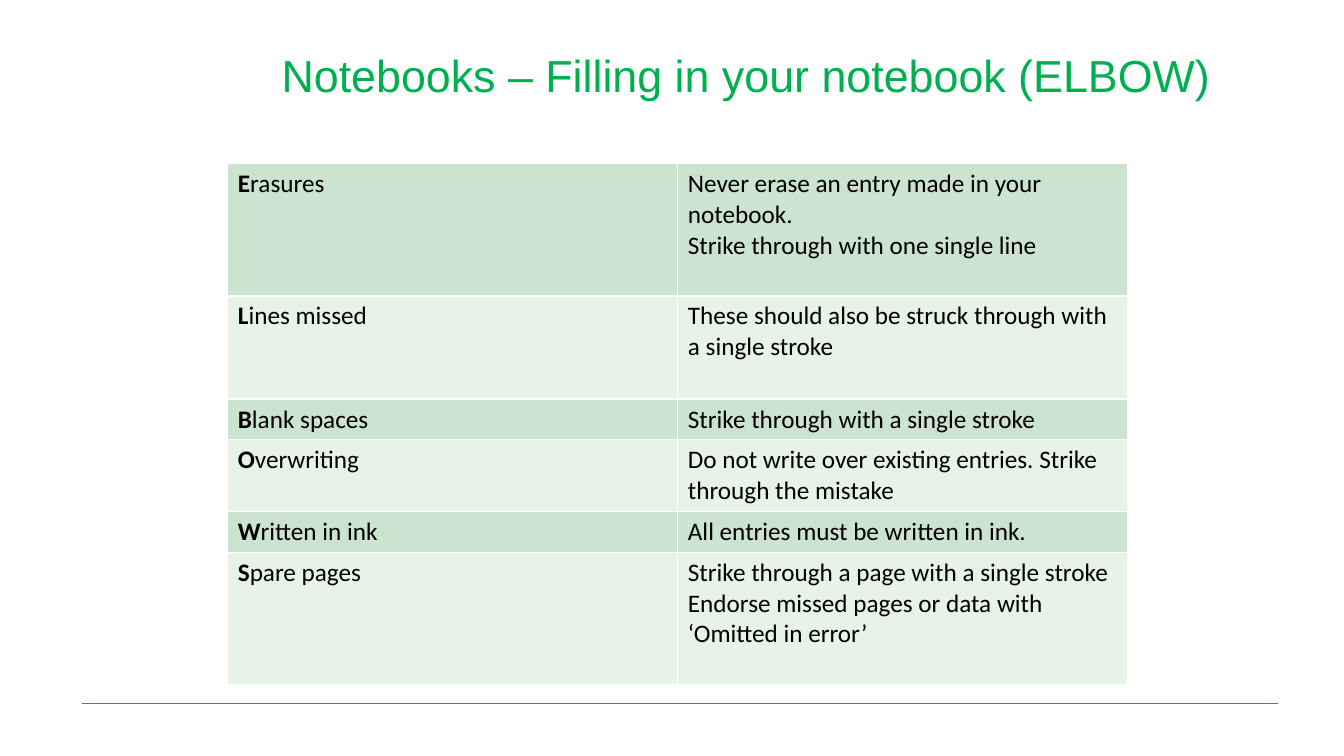
from pptx import Presentation
from pptx.dml.color import RGBColor as Rgb
from pptx.enum.shapes import MSO_CONNECTOR as Conn
from pptx.enum.text import MSO_ANCHOR as Anchor, PP_ALIGN as Align
from pptx.oxml import parse_xml
from pptx.oxml.ns import nsdecls
from pptx.util import Pt

TITLE = "Notebooks – Filling in your notebook (ELBOW)"
# Topic, rule paragraphs, row height
ROWS = [
    ("Erasures", ["Never erase an entry made in your notebook.",
                  "Strike through with one single line"], 94.6),
    ("Lines missed", ["These should also be struck through with "
                      "a single stroke"], 73.6),
    ("Blank spaces", ["Strike through with a single stroke"], 29.2),
    ("Overwriting", ["Do not write over existing entries. "
                     "Strike through the mistake"], 51.2),
    ("Written in ink", ["All entries must be written in ink."], 29.2),
    ("Spare pages", ["Strike through a page with a single stroke",
                     "Endorse missed pages or data with "
                     "‘Omitted in error’"], 94.6),
]
BANDS = ["CCE3CF", "E7F2E9"]


def color(code):
    return Rgb.from_string(code)


def style(run, face, size, code, bold=False):
    font = run.font
    font.name, font.size, font.bold = face, Pt(size), bold
    font.color.rgb = color(code)


def add_title(slide, text):
    title = slide.shapes.title
    title.left, title.top = Pt(46), Pt(36.7)
    title.width, title.height = Pt(867.6), Pt(38.2)
    frame = title.text_frame
    frame.text = text
    frame.word_wrap = True
    frame.vertical_anchor = Anchor.MIDDLE
    # The wide left inset moves the centred text to the right
    frame.margin_left, frame.margin_right = Pt(114), Pt(7.2)
    para = frame.paragraphs[0]
    para.alignment, para.line_spacing = Align.CENTER, 0.9
    style(para.runs[0], "Arial", 32, "00B050")


def add_rule(slide, left, right, top):
    line = slide.shapes.add_connector(
        Conn.STRAIGHT, Pt(left), Pt(top), Pt(right), Pt(top))
    line.line.color.rgb = color("00AF41")
    line.line.width = Pt(0.5)
    props = line._element.spPr
    props.append(parse_xml(f"<a:effectLst {nsdecls('a')}/>"))


def set_cell(cell, band):
    cell.fill.solid()
    cell.fill.fore_color.rgb = color(band)
    props = cell._tc.get_or_add_tcPr()
    for spot, side in enumerate("LRTB"):
        props.insert(spot, parse_xml(
            f'<a:ln{side} {nsdecls("a")} w="{Pt(1)}"><a:solidFill>'
            f'<a:srgbClr val="FFFFFF"/></a:solidFill></a:ln{side}>'))
    for para in cell.text_frame.paragraphs:
        for run in para.runs:
            style(run, "Calibri", 18, "000000")


def add_grid(slide, rows):
    total = sum(high for _, _, high in rows)
    grid = slide.shapes.add_table(
        len(rows), 2, Pt(162.7), Pt(116.8), Pt(643), Pt(total)).table
    grid.first_row = False
    for index, (topic, rules, high) in enumerate(rows):
        grid.rows[index].height = Pt(high)
        left, right = grid.cell(index, 0), grid.cell(index, 1)
        # The first letter spells the memory word
        para = left.text_frame.paragraphs[0]
        para.text = topic[0]
        para.add_run().text = topic[1:]
        right.text_frame.text = "\n".join(rules)
        for cell in (left, right):
            set_cell(cell, BANDS[index % 2])
        para.runs[0].font.bold = True


def main():
    deck = Presentation()
    deck.slide_width, deck.slide_height = Pt(960), Pt(540)
    slide = deck.slides.add_slide(deck.slide_layouts[5])
    add_rule(slide, 58.3, 913, 502.6)
    add_title(slide, TITLE)
    add_grid(slide, ROWS)
    deck.save("out.pptx")


if __name__ == "__main__":
    main()
